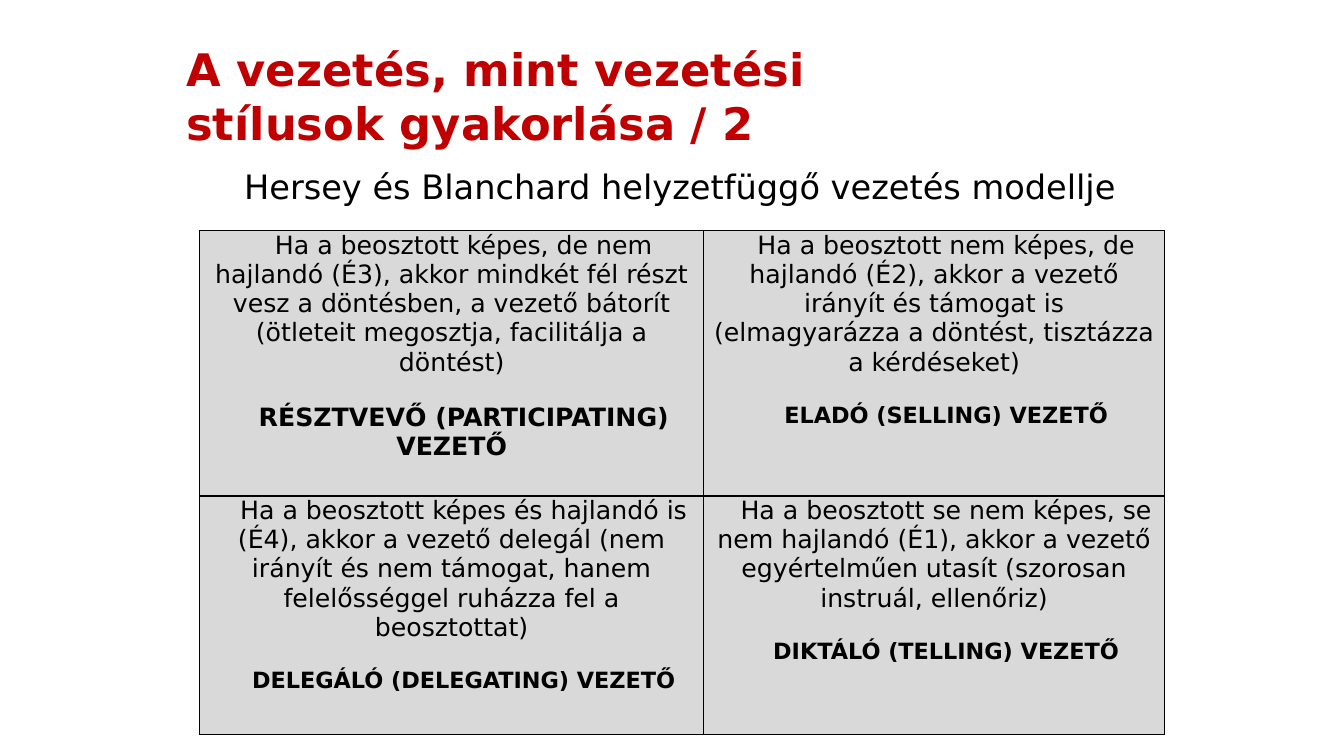
from lxml.etree import SubElement
from pptx import Presentation
from pptx.dml.color import RGBColor
from pptx.enum.text import MSO_ANCHOR, PP_ALIGN
from pptx.oxml.ns import qn
from pptx.util import Inches, Pt

# Content
TITLE = "A vezetés, mint vezetési\vstílusok gyakorlása / 2"
SUBTITLE = "Hersey és Blanchard helyzetfüggő vezetés modellje"
# Each cell: description, leader style, size of the style name
STYLES = [
    [
        ("Ha a beosztott képes, de nem hajlandó (É3), akkor mindkét fél részt vesz "
         "a döntésben, a vezető bátorít (ötleteit megosztja, facilitálja a döntést)",
         "RÉSZTVEVŐ (PARTICIPATING) VEZETŐ", 18),
        ("Ha a beosztott nem képes, de hajlandó (É2), akkor a vezető irányít és "
         "támogat is (elmagyarázza a döntést, tisztázza a kérdéseket)",
         "ELADÓ (SELLING) VEZETŐ", 16),
    ],
    [
        ("Ha a beosztott képes és hajlandó is (É4), akkor a vezető delegál (nem "
         "irányít és nem támogat, hanem felelősséggel ruházza fel a beosztottat)",
         "DELEGÁLÓ (DELEGATING) VEZETŐ", 16),
        ("Ha a beosztott se nem képes, se nem hajlandó (É1), akkor a vezető "
         "egyértelműen utasít (szorosan instruál, ellenőriz)",
         "DIKTÁLÓ (TELLING) VEZETŐ", 16),
    ],
]
COLUMN_WIDTHS = (5, 4.57)
ROW_HEIGHTS = (2.63, 2.37)

THEME = {
    "font": "DejaVu Sans",
    "title": RGBColor(0xC0, 0x00, 0x00),
    "text": RGBColor(0, 0, 0),
    "cell": RGBColor(0xD9, 0xD9, 0xD9),
    "border": "000000",
    "title_size": 32,
    "subtitle_size": 24,
    "body_size": 18,
    "style_gap": 18.6,
}


def set_font(paragraph, size, color=THEME["text"], bold=False):
    font = paragraph.font
    font.name, font.size, font.bold = THEME["font"], Pt(size), bold
    font.color.rgb = color


def add_text(slide, box, text, size, align, **font_options):
    shape = slide.shapes.add_textbox(*map(Inches, box))
    frame = shape.text_frame
    frame.word_wrap = True
    frame.vertical_anchor = MSO_ANCHOR.MIDDLE
    paragraph = frame.paragraphs[0]
    paragraph.text = text
    paragraph.alignment = align
    set_font(paragraph, size, **font_options)


def add_borders(cell):
    properties = cell._tc.get_or_add_tcPr()
    for side in ("a:lnL", "a:lnR", "a:lnT", "a:lnB"):
        line = SubElement(properties, qn(side), w=str(Pt(1)))
        fill = SubElement(line, qn("a:solidFill"))
        SubElement(fill, qn("a:srgbClr"), val=THEME["border"])


def fill_cell(cell, description, style, style_size):
    add_borders(cell)
    cell.fill.solid()
    cell.fill.fore_color.rgb = THEME["cell"]
    cell.margin_left = cell.margin_right = Inches(0.08)
    cell.margin_top = cell.margin_bottom = 0
    cell.text = f"{description}\n{style}"
    body, label = cell.text_frame.paragraphs
    for paragraph in (body, label):
        paragraph.alignment = PP_ALIGN.CENTER
        paragraph._p.get_or_add_pPr().set("indent", str(Inches(0.24)))
    set_font(body, THEME["body_size"])
    set_font(label, style_size, bold=True)
    label.space_before = Pt(THEME["style_gap"])


def main():
    presentation = Presentation()
    presentation.slide_width, presentation.slide_height = Inches(13.33), Inches(7.5)
    slide = presentation.slides.add_slide(presentation.slide_layouts[6])

    # Headings
    add_text(slide, (1.75, 0.32, 10, 1.25), TITLE, THEME["title_size"],
             PP_ALIGN.LEFT, color=THEME["title"], bold=True)
    add_text(slide, (1.94, 1.59, 9.61, 0.51), SUBTITLE, THEME["subtitle_size"],
             PP_ALIGN.CENTER)

    # Leadership style matrix
    table = slide.shapes.add_table(
        len(ROW_HEIGHTS), len(COLUMN_WIDTHS), Inches(1.98), Inches(2.29),
        Inches(sum(COLUMN_WIDTHS)), Inches(sum(ROW_HEIGHTS))).table
    table.first_row = table.horz_banding = False
    for column, width in zip(table.columns, COLUMN_WIDTHS):
        column.width = Inches(width)
    for row, height, styles in zip(table.rows, ROW_HEIGHTS, STYLES):
        row.height = Inches(height)
        for cell, content in zip(row.cells, styles):
            fill_cell(cell, *content)

    presentation.save("out.pptx")


if __name__ == "__main__":
    main()
